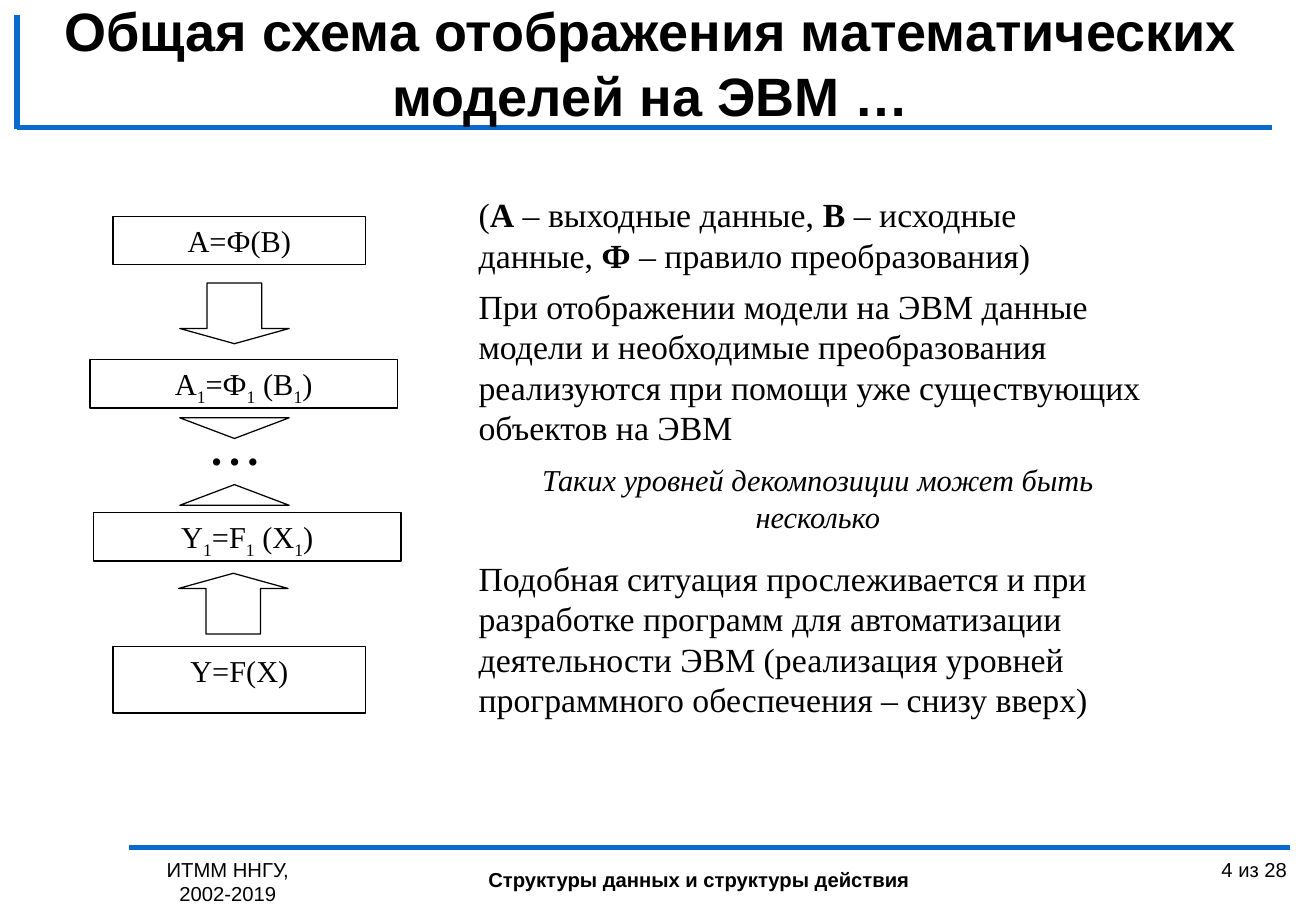
from pptx import Presentation, util as u
from pptx.dml.color import RGBColor
from pptx.enum import shapes, text
from pptx.oxml.ns import qn
from lxml import etree

PX = 9144
BLACK, BLUE = "000000", "0969CD"
SERIF, SANS = "Times New Roman", "Arial"
LEFT, CENTER, RIGHT = text.PP_ALIGN.LEFT, text.PP_ALIGN.CENTER, text.PP_ALIGN.RIGHT
SHAPE = shapes.MSO_SHAPE

RULES = [(106, 698, 1062, 698), (14, 105, 1047, 105), (14, 12, 14, 106)]

MODELS = [
    ("А=Ф(В)", (93, 178, 208, 40)),
    ("А|1|=Ф|1| (В|1|)", (74, 296, 253, 40)),
    ("Y|1|=F|1| (X|1|)", (77, 422, 253, 40)),
    ("Y=F(X)", (93, 532, 208, 55)),
]

ARROWS = [
    (SHAPE.DOWN_ARROW, (148, 233, 90, 50)),
    (SHAPE.FLOWCHART_MERGE, (148, 344, 90, 17)),
    (SHAPE.FLOWCHART_EXTRACT, (148, 399, 90, 17)),
    (SHAPE.UP_ARROW, (147, 472, 90, 50)),
]

NOTES = [
    ("(|А| – выходные данные, |В |– исходные данные, |Ф| – правило преобразования)",
     (384, 155, 551, 77), 20, LEFT, False),
    ("При отображении модели на ЭВМ данные модели и необходимые преобразования "
     "реализуются при помощи уже существующих объектов на ЭВМ",
     (384, 230, 578, 145), 20, LEFT, False),
    ("Таких уровней декомпозиции может быть несколько",
     (384, 375, 578, 71), 18, CENTER, True),
    ("Подобная ситуация прослеживается и при разработке программ для автоматизации "
     "деятельности ЭВМ (реализация уровней программного обеспечения – снизу вверх)",
     (384, 454, 578, 145), 20, LEFT, False),
    ("• • •", (164, 359, 81, 40), 18, LEFT, False),
]

TITLE = ("Общая схема отображения математических моделей на ЭВМ …", (18, 21, 1035, 61))

FOOTER = [
    ("ИТММ ННГУ, 2002-2019", (109, 701, 157, 29), CENTER, False),
    ("Структуры данных и структуры действия", (392, 709, 425, 29), LEFT, True),
    ("4 из 28", (967, 701, 102, 49), RIGHT, False),
]


def rgb(color):
    return RGBColor.from_string(color)


def emu(box):
    return [v * PX for v in box]


def write(sp, words, size, font, align, bold=False, italic=False, subscript=False):
    tf = sp.text_frame
    tf.word_wrap = True
    tf.vertical_anchor = text.MSO_ANCHOR.TOP
    p = tf.paragraphs[0]
    p.alignment = align
    for i, part in enumerate(words.split("|")):
        marked = i % 2 == 1
        r = p.add_run()
        r.text = part
        r.font.size = u.Pt(size)
        r.font.name = font
        r.font.color.rgb = rgb(BLACK)
        r.font.bold = bold or (marked and not subscript)
        r.font.italic = italic
        if marked and subscript:
            r.font._element.set("baseline", "-25000")
    return tf


def add_text(s, words, box, *style, **flags):
    return write(s.shapes.add_textbox(*emu(box)), words, *style, **flags)


def add_outline(s, kind, box):
    sp = s.shapes.add_shape(kind, *emu(box))
    sp.shadow.inherit = False
    sp.fill.background()
    sp.line.color.rgb = rgb(BLACK)
    sp.line.width = u.Pt(0.75)
    return sp


def add_rule(s, ends):
    line = s.shapes.add_connector(shapes.MSO_CONNECTOR.STRAIGHT, *emu(ends))
    line.line.color.rgb = rgb(BLUE)
    line.line.width = u.Pt(3)
    etree.SubElement(line._element.spPr, qn("a:effectLst"))


def main():
    prs = Presentation()
    prs.slide_width, prs.slide_height = emu((1083, 750))
    s = prs.slides.add_slide(prs.slide_layouts[6])

    for ends in RULES:
        add_rule(s, ends)
    tf = add_text(s, *TITLE, 32, SANS, CENTER, bold=True)
    tf.vertical_anchor = text.MSO_ANCHOR.MIDDLE

    for words, box in MODELS:
        write(add_outline(s, SHAPE.RECTANGLE, box), words, 18, SERIF, CENTER, subscript=True)
    for kind, box in ARROWS:
        sp = add_outline(s, kind, box)
        if len(sp.adjustments):
            sp.adjustments[0], sp.adjustments[1] = 0.5, 0.25

    for words, box, size, align, italic in NOTES:
        add_text(s, words, box, size, SERIF, align, italic=italic)
    for words, box, align, bold in FOOTER:
        add_text(s, words, box, 12, SANS, align, bold=bold)

    prs.save("out.pptx")


if __name__ == "__main__":
    main()
